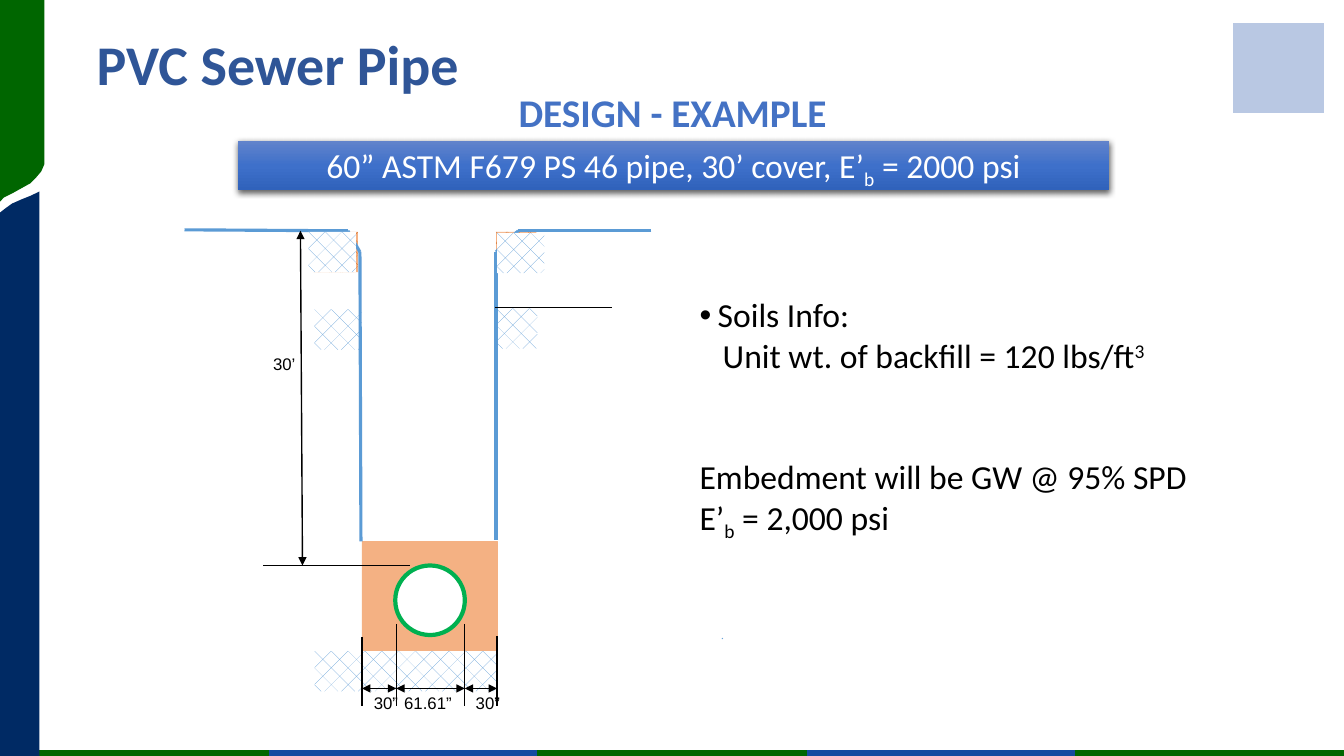
from dataclasses import dataclass
from itertools import pairwise

from lxml import etree
from pptx import Presentation
from pptx import util as u
from pptx.dml.color import RGBColor
from pptx.enum import dml, shapes, text
from pptx.oxml.ns import nsdecls, qn
from pptx.oxml import parse_xml

PX = 9144  # 100 px to the inch


@dataclass(frozen=True)
class Theme:
    green: str = "006600"
    navy: str = "002A64"
    blue: str = "164AA0"
    emblem: str = "B9C8E3"
    title: str = "2F5597"
    subtitle: str = "4472C4"
    ground: str = "5B9BD5"
    soil: str = "F4B183"
    soil_dots: str = "C55A11"
    pipe: str = "00B050"
    white: str = "FFFFFF"
    black: str = "000000"
    banner: tuple = ((0, "6183CB"), (50, "3E70CA"), (100, "3062BB"))
    body_font: str = "Calibri"
    label_font: str = "Arial"
    title_size: int = 40
    subtitle_size: int = 28
    body_size: int = 24
    label_size: int = 12


T = Theme()


def rgb(colour):
    return RGBColor.from_string(colour)


def emu(*lengths):
    return [u.Emu(length * PX) for length in lengths]


def add_line(slide, start, end, colour, width, arrows=False):
    line = slide.shapes.add_connector(shapes.MSO_CONNECTOR.STRAIGHT, *emu(*start, *end))
    line.line.color.rgb = rgb(colour)
    line.line.width = u.Pt(width)
    properties = line.element.spPr
    if arrows:
        stroke = properties.find(qn("a:ln"))
        for tip in ("a:headEnd", "a:tailEnd"):
            etree.SubElement(stroke, qn(tip), type="triangle")
    etree.SubElement(properties, qn("a:effectLst"))


def paint(shape, fill, outline=None, width=0.5):
    shape.shadow.inherit = False
    shape.fill.solid()
    shape.fill.fore_color.rgb = rgb(fill)
    if outline:
        shape.line.color.rgb = rgb(outline)
        shape.line.width = u.Pt(width)
    else:
        shape.line.fill.background()


def add_block(slide, box, fill, kind=shapes.MSO_SHAPE.RECTANGLE, **outline):
    block = slide.shapes.add_shape(kind, *emu(*box))
    paint(block, fill, **outline)
    return block


def add_pattern(slide, box, pattern, fore, back):
    block = add_block(slide, box, back)
    block.fill.patterned()
    block.fill.pattern = pattern
    block.fill.fore_color.rgb = rgb(fore)
    block.fill.back_color.rgb = rgb(back)


def write(paragraph, pieces, size, colour, font=T.body_font, bold=False):
    """Fill a paragraph from (words, baseline shift in percent) pieces."""
    for words, baseline in pieces:
        run = paragraph.add_run()
        run.text = words
        run.font.size = u.Pt(size)
        run.font.name = font
        run.font.bold = bold
        run.font.color.rgb = rgb(colour)
        if baseline:
            run.font._element.set("baseline", str(baseline * 1000))


def add_text(slide, box, words, size, colour, wrap=True, align=text.PP_ALIGN.LEFT,
             anchor=text.MSO_ANCHOR.TOP, **style):
    frame = slide.shapes.add_textbox(*emu(*box)).text_frame
    frame.word_wrap = wrap
    frame.vertical_anchor = anchor
    frame.paragraphs[0].alignment = align
    write(frame.paragraphs[0], [(words, 0)], size, colour, **style)


def add_outline(slide, points, fill):
    start, *rest = points
    builder = slide.shapes.build_freeform(*start, scale=PX)
    builder.add_line_segments(rest)
    paint(builder.convert_to_shape(), fill)


def draw_frame(slide, width, height):
    """Bottom stripe, left edge bands and the emblem at top right."""
    step = width / 5
    for i in range(5):
        colour = T.blue if i % 2 else T.green
        add_line(slide, (round(i * step), height - 3), (round((i + 1) * step), height - 3),
                 colour, 3.75)
    add_outline(slide, [(44, 160), (44, 0), (0, 0), (0, 200), (4, 196), (12, 192), (21, 187),
                        (30, 182), (36, 176), (41, 170), (44, 163)], T.green)
    add_outline(slide, [(39, height), (39, 190), (31, 194), (21, 198), (12, 202), (5, 207),
                        (0, 211), (0, height)], T.navy)
    add_block(slide, (width - 110, 23, 90, 89), T.emblem)


def draw_headings(slide, left, top):
    add_text(slide, (left, top, 1000, 125), "PVC Sewer Pipe", T.title_size, T.title,
             bold=True, anchor=text.MSO_ANCHOR.MIDDLE)
    add_text(slide, (left + 81, top + 83, 1000, 57), "DESIGN - EXAMPLE", T.subtitle_size,
             T.subtitle, bold=True, align=text.PP_ALIGN.CENTER)


def draw_banner(slide, box):
    banner = add_block(slide, box, T.subtitle)
    banner.fill.gradient()
    banner.fill.gradient_angle = 270
    properties = banner.element.spPr
    stops = properties.find(qn("a:gradFill")).find(qn("a:gsLst"))
    stops[:] = [parse_xml(f'<a:gs {nsdecls("a")} pos="{at * 1000}"><a:srgbClr val="{colour}"/></a:gs>')
                for at, colour in T.banner]
    properties.find(qn("a:effectLst")).append(parse_xml(
        f'<a:outerShdw {nsdecls("a")} blurRad="{u.Pt(4.5)}" dist="{u.Pt(1.5)}" dir="5400000" '
        f'rotWithShape="0"><a:srgbClr val="{T.black}"><a:alpha val="63000"/></a:srgbClr></a:outerShdw>'))
    banner.text_frame.vertical_anchor = text.MSO_ANCHOR.MIDDLE
    line = banner.text_frame.paragraphs[0]
    line.alignment = text.PP_ALIGN.CENTER
    line.line_spacing = 0.9
    write(line, [("60” ASTM F679 PS 46 pipe, 30’ cover, E’", 0), ("b", -25), (" = 2000 psi", 0)],
          T.body_size, T.white)


def draw_soils_info(slide, box):
    frame = slide.shapes.add_textbox(*emu(*box)).text_frame
    frame.word_wrap = True
    lines = [[("Soils Info:", 0)],
             [("Unit wt. of backfill = 120 lbs/ft", 0), ("3", 30)],
             [("Embedment will be GW @ 95% SPD", 0)],
             [("E’", 0), ("b", -25), (" = 2,000 psi", 0)]]
    paragraphs = [frame.paragraphs[0]] + [frame.add_paragraph() for _ in lines[1:]]
    heading, weight, embedment, _ = paragraphs
    bulleted = heading._p.get_or_add_pPr()
    bulleted.set("marL", str(18 * PX))
    bulleted.set("indent", str(-18 * PX))
    etree.SubElement(bulleted, qn("a:buFont"), typeface=T.label_font)
    etree.SubElement(bulleted, qn("a:buChar"), char="•")
    weight._p.get_or_add_pPr().set("marL", str(23 * PX))
    embedment.space_before = u.Pt(58)
    for paragraph, pieces in zip(paragraphs, lines):
        write(paragraph, pieces, T.body_size, T.black)


def draw_trench(slide, left, top):
    def at(x, y, *size):
        return (left + x, top + y, *size)

    def hatch(*box):
        add_pattern(slide, at(*box), dml.MSO_PATTERN.DIAGONAL_BRICK, T.ground, T.white)

    def label(words, x, y, width):
        add_text(slide, at(x, y, width, 30), words, T.label_size, T.black, wrap=False,
                 font=T.label_font)

    for x, width in ((128, 44), (309, 40)):
        add_pattern(slide, at(x, 2, width, 40), dml.MSO_PATTERN.PERCENT_25, T.soil_dots, T.soil)
    add_block(slide, at(176, 309, 134, 108), T.soil, outline=T.soil)
    for box in ((309, 78, 41, 40), (129, 418, 181, 40), (129, 79, 47, 40)):
        hatch(*box)

    left_side = [(0, 0), (162, 1), (174, 22), (175, 309)]
    right_side = [(463, 1), (331, 1), (309, 22), (309, 308)]
    for side in (left_side, right_side):
        for start, end in pairwise(side):
            add_line(slide, at(*start), at(*end), T.ground, 2.25)
    add_line(slide, at(308, 77), at(424, 77), T.black, 1)

    add_line(slide, at(78, 333), at(224, 333), T.black, 1)
    add_line(slide, at(115, 1), at(117, 333), T.black, 1, arrows=True)
    label("30’", 78, 118, 42)
    add_block(slide, at(209, 333, 69, 69), T.white, shapes.MSO_SHAPE.OVAL,
              outline=T.pipe, width=3)

    edges = [(176, 404), (210, 391), (278, 391), (310, 403)]
    for x, y in edges:
        add_line(slide, at(x, y), at(x, 472), T.black, 1)
    for (start, _), (end, _) in pairwise(edges):
        add_line(slide, at(start, 455), at(end, 455), T.black, 0.5, arrows=True)
    for words, x, width in (("30”", 178, 44), ("61.61”", 208, 68), ("30”", 279, 44)):
        label(words, x, 454, width)

    hatch(123, 2, 47, 40)
    hatch(310, 3, 47, 40)


def main():
    deck = Presentation()
    width, height = 1333, 750
    deck.slide_width, deck.slide_height = emu(width, height)
    slide = deck.slides.add_slide(deck.slide_layouts[6])
    draw_frame(slide, width, height)
    add_line(slide, (717, 633), (716, 634), T.ground, 0.5)
    draw_soils_info(slide, (684, 287, 514, 212))
    draw_trench(slide, 183, 228)
    draw_banner(slide, (236, 140, 864, 49))
    draw_headings(slide, 86, 0)
    deck.save("out.pptx")


if __name__ == "__main__":
    main()
